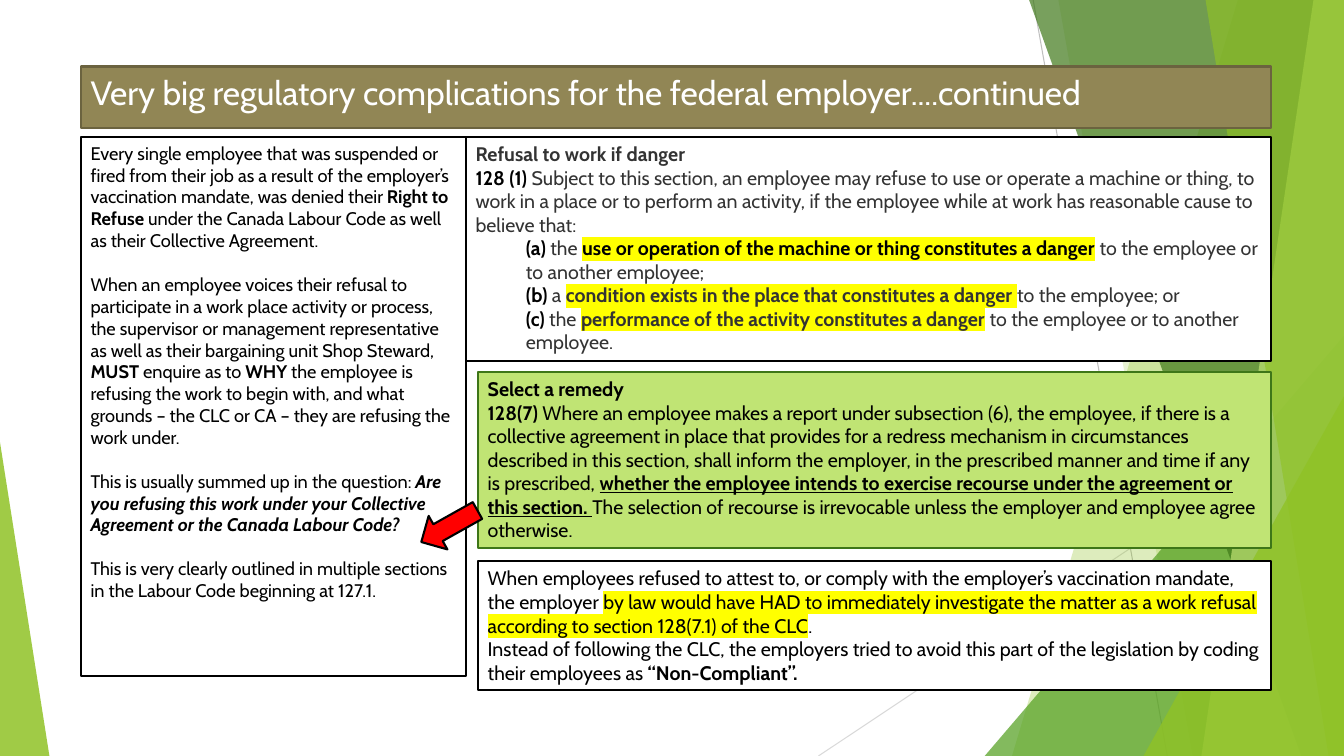
"""Builds a slide on the right to refuse dangerous work under the labour code."""
from lxml import etree
from pptx import Presentation
from pptx import util as u
from pptx.dml.color import RGBColor
from pptx.enum import shapes, text
from pptx.oxml.ns import qn

WIDTH, HEIGHT = 960, 540
FONT = "Cabin"
BLACK, GREY, WHITE, YELLOW = "000000", "333333", "FFFFFF", "FFFF00"

RAYS = [((738, 0), (833.8, HEIGHT), "BFBFBF"), ((WIDTH, 290), (584.6, HEIGHT), "D9D9D9")]

BAND, RIGHT_PEAK, LEFT_PEAK = "band", 1, 0
FACETS = [
    (BAND, (884.2, 722.9), "90C226", 30),
    (BAND, (756, 851.8), "90C226", 20),
    (RIGHT_PEAK, (703.4, 239.8, 256.6, 300.2), "54A021", 72),
    (BAND, (735.1, 929.5), "3F7819", 70),
    (BAND, (938.2, 858.2), "C0E474", 70),
    (BAND, (861.1, 949), "90C226", 65),
    (RIGHT_PEAK, (816.8, 283, 143.2, 257), "90C226", 80),
    (LEFT_PEAK, (0, 316, 35.3, 224), "90C226", 85),
]

PLAIN, BOLD, PALE = {}, {"bold": True}, {"color": GREY}
PALE_BOLD = {**PALE, **BOLD}
MARKED = {"highlight": YELLOW}
TOP = {"gap": 0, "indent": 0}
SPACED = {"gap": 15.6, "indent": 0}
CLAUSE = {"gap": 0, "indent": 36}

TITLE = [(TOP, [("Very big regulatory complications for the federal employer....continued", {"color": WHITE})])]

DENIED = [
    (TOP, [
        ("Every single employee that was suspended or fired from their job as a result of the employer’s "
         "vaccination mandate, was denied their ", PLAIN),
        ("Right to Refuse", BOLD),
        (" under the Canada Labour Code as well as their Collective Agreement.", PLAIN)]),
    (SPACED, [
        ("When an employee voices their refusal to participate in a work place activity or process, the "
         "supervisor or management representative as well as their bargaining unit Shop Steward, ", PLAIN),
        ("MUST", BOLD), (" enquire as to ", PLAIN), ("WHY", BOLD),
        (" the employee is refusing the work to begin with, and what grounds – the CLC or CA – they are "
         "refusing the work under.", PLAIN)]),
    (SPACED, [
        ("This is usually summed up in the question: ", PLAIN),
        ("Are you refusing this work under your Collective Agreement or the Canada Labour Code?",
         {"bold": True, "italic": True})]),
    (SPACED, [("This is very clearly outlined in multiple sections in the Labour Code beginning at 127.1.", PLAIN)]),
]

REFUSAL = [
    (TOP, [("Refusal to work if danger", PALE_BOLD)]),
    (TOP, [
        ("128 (1)", BOLD),
        (" Subject to this section, an employee may refuse to use or operate a machine or thing, to work in a "
         "place or to perform an activity, if the employee while at work has reasonable cause to believe that:",
         PALE)]),
    (CLAUSE, [
        ("(a)", BOLD), (" the ", PALE),
        ("use or operation of the machine or thing constitutes a danger", {**BOLD, **MARKED}),
        (" to the employee or to another employee;", PALE)]),
    (CLAUSE, [
        ("(b)", BOLD), (" a ", PALE),
        ("condition exists in the place that constitutes a danger ", {**PALE_BOLD, **MARKED}),
        ("to the employee; or", PALE)]),
    (CLAUSE, [
        ("(c)", BOLD), (" the ", PALE),
        ("performance of the activity constitutes a danger", {**PALE_BOLD, **MARKED}),
        (" to the employee or to another employee.", PALE)]),
]

REMEDY = [
    (TOP, [("Select a remedy", BOLD)]),
    (TOP, [
        ("128(7)", BOLD),
        (" Where an employee makes a report under subsection (6), the employee, if there is a collective "
         "agreement in place that provides for a redress mechanism in circumstances described in this section, "
         "shall inform the employer, in the prescribed manner and time if any is prescribed, ", PLAIN),
        ("whether the employee intends to exercise recourse under the agreement or this section. ",
         {"bold": True, "underline": True}),
        ("The selection of recourse is irrevocable unless the employer and employee agree otherwise.", PLAIN)]),
]

MANDATE = [
    (TOP, [
        ("When employees refused to attest to, or comply with the employer’s vaccination mandate, the employer ",
         PLAIN),
        ("by law would have HAD to immediately investigate the matter as a work refusal according to section "
         "128(7.1) of the CLC", MARKED),
        (".", PLAIN)]),
    (TOP, [
        ("Instead of following the CLC, the employers tried to avoid this part of the legislation by coding "
         "their employees as ", PLAIN),
        ("“Non-Compliant”.", BOLD)]),
]

LEFT, RIGHT, BODY_TOP, DIVIDER, INSET = 57.6, 908, 97.9, 332.6, 341.3
PANELS = [
    (TITLE, (LEFT, 47.5, RIGHT, 91.4), 24, "918655", "6B633F"),
    (DENIED, (LEFT, BODY_TOP, DIVIDER, 483.1), 13, WHITE, BLACK),
    (REFUSAL, (DIVIDER, BODY_TOP, RIGHT, 257.7), 14, WHITE, BLACK),
    (REMEDY, (INSET, 265.7, RIGHT, 391.7), 14, "C0E474", "3E7618"),
    (MANDATE, (INSET, 401, RIGHT, 493.2), 14, WHITE, BLACK),
]
ARROW = (298, 362.2, 46, 27.4)


def rgb(code):
    return RGBColor.from_string(code)


def paint(shape, fill, outline=None, opacity=100):
    shape.shadow.inherit = False
    shape.fill.solid()
    shape.fill.fore_color.rgb = rgb(fill)
    if opacity < 100:
        tint = shape.fill._xPr.find(qn("a:solidFill"))[0]
        etree.SubElement(tint, qn("a:alpha"), val=str(opacity * 1000))
    if outline:
        shape.line.color.rgb = rgb(outline)
        shape.line.width = u.Pt(1.5)
    else:
        shape.line.fill.background()


def write(paragraph, words, size, color=BLACK, bold=False, italic=False, underline=False, highlight=None):
    run = paragraph.add_run()
    run.text = words
    font = run.font
    font.name, font.size = FONT, u.Pt(size)
    font.bold, font.italic, font.underline = bold, italic, underline
    font.color.rgb = rgb(color)
    if highlight:
        marker = etree.Element(qn("a:highlight"))
        etree.SubElement(marker, qn("a:srgbClr"), val=highlight)
        run._r.rPr.find(qn("a:solidFill")).addnext(marker)


def add_preset(slide, kind, box):
    return slide.shapes.add_shape(kind, *(u.Pt(length) for length in box))


def add_ray(slide, start, end, color):
    ray = slide.shapes.add_connector(shapes.MSO_CONNECTOR.STRAIGHT, *(u.Pt(c) for c in start + end))
    ray.line.color.rgb = rgb(color)
    ray.line.width = u.Pt(0.75)
    etree.SubElement(ray._element.spPr, qn("a:effectLst"))


def add_facet(slide, kind, place, color, opacity):
    if kind == BAND:
        top, bottom = place
        outline = slide.shapes.build_freeform(u.Pt(top), 0)
        corners = [(WIDTH, 0), (WIDTH, HEIGHT), (bottom, HEIGHT)]
        outline.add_line_segments([(u.Pt(x), u.Pt(y)) for x, y in corners], close=True)
        facet = outline.convert_to_shape()
    else:
        facet = add_preset(slide, shapes.MSO_SHAPE.ISOSCELES_TRIANGLE, place)
        facet.adjustments[0] = kind
    paint(facet, color, opacity=opacity)


def add_panel(slide, content, edges, size, fill, outline):
    left, top, right, bottom = edges
    panel = add_preset(slide, shapes.MSO_SHAPE.RECTANGLE, (left, top, right - left, bottom - top))
    paint(panel, fill, outline)
    frame = panel.text_frame
    frame.word_wrap = True
    frame.vertical_anchor = text.MSO_ANCHOR.TOP
    for number, (layout, runs) in enumerate(content):
        paragraph = frame.add_paragraph() if number else frame.paragraphs[0]
        paragraph.alignment = text.PP_ALIGN.LEFT
        paragraph.space_before = u.Pt(layout["gap"])
        paragraph._p.get_or_add_pPr().set("marL", str(u.Pt(layout["indent"])))
        for words, style in runs:
            write(paragraph, words, size, **style)


def main():
    deck = Presentation()
    deck.slide_width, deck.slide_height = u.Pt(WIDTH), u.Pt(HEIGHT)
    slide = deck.slides.add_slide(deck.slide_layouts[6])
    for ray in RAYS:
        add_ray(slide, *ray)
    for facet in FACETS:
        add_facet(slide, *facet)
    for panel in PANELS:
        add_panel(slide, *panel)
    arrow = add_preset(slide, shapes.MSO_SHAPE.LEFT_ARROW, ARROW)
    arrow.rotation = 330.7
    paint(arrow, "FF0000", BLACK)
    deck.save("out.pptx")


if __name__ == "__main__":
    main()
